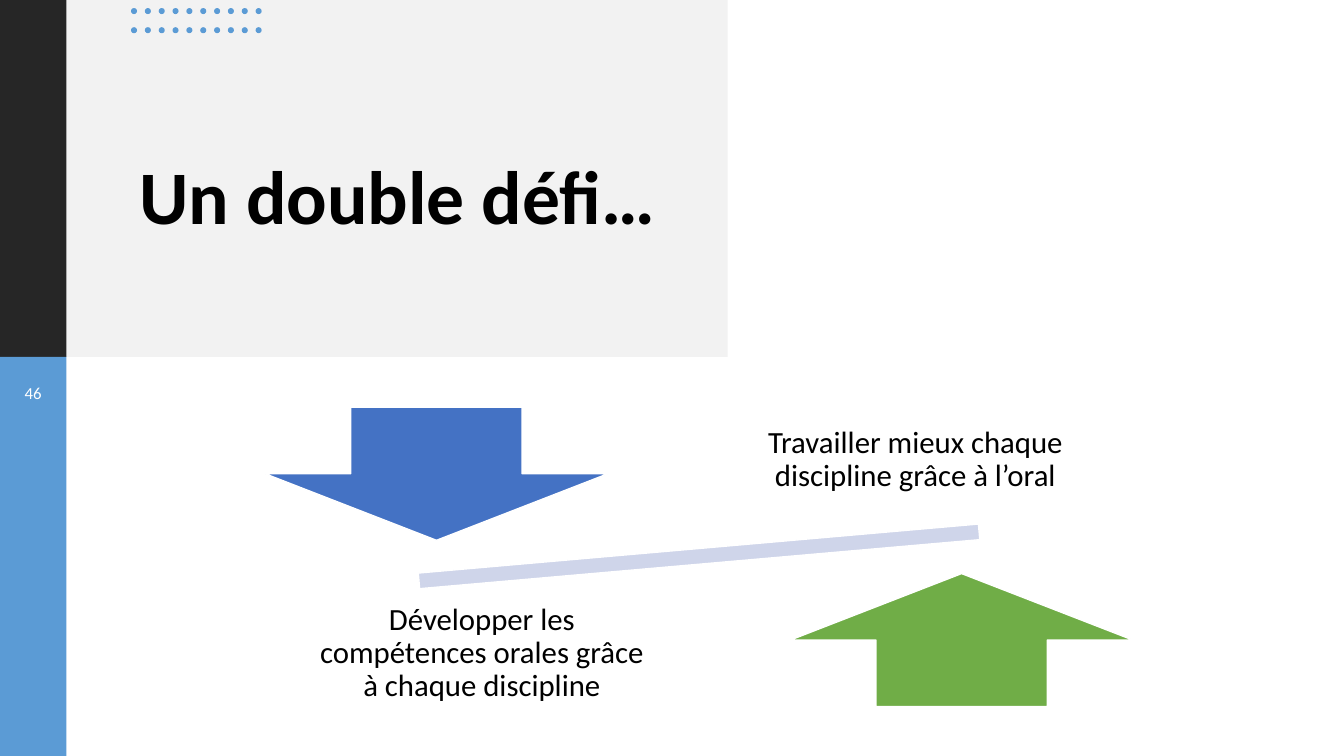
import pptx
import pptx.util
from dataclasses import dataclass
from pptx.dml.color import RGBColor
from pptx.enum.shapes import MSO_SHAPE
from pptx.enum.text import MSO_ANCHOR, MSO_AUTO_SIZE, PP_ALIGN


@dataclass(frozen=True)
class Theme:
    font: str = "Calibri"
    black: str = "000000"
    white: str = "FFFFFF"
    panel: str = "F2F2F2"
    strip: str = "262626"
    accent: str = "5B9BD5"
    beam: str = "CFD5EA"
    blue_arrow: str = "4472C4"
    green_arrow: str = "70AD47"
    title_size: int = 54
    label_size: int = 22
    number_size: int = 12


theme = Theme()
presentation = pptx.Presentation()
presentation.slide_width = pptx.util.Inches(13.33)
presentation.slide_height = pptx.util.Inches(7.5)
column = presentation.slide_width / 100
row = presentation.slide_height / 100
slide = presentation.slides.add_slide(presentation.slide_layouts[5])


def add_block(kind, left, top, width, height, fill, outline=None):
    """Add a flat preset shape, placed in hundredths of the slide's size."""
    shape = slide.shapes.add_shape(
        kind, int(left * column), int(top * row), int(width * column), int(height * row))
    shape.shadow.inherit = False
    shape.fill.solid()
    shape.fill.fore_color.rgb = RGBColor.from_string(fill)
    if outline:
        shape.line.color.rgb = RGBColor.from_string(outline)
        shape.line.width = pptx.util.Pt(1)
    else:
        shape.line.fill.background()
    return shape


def write_text(text, left, top, width, height, size, color=theme.black, bold=False,
               align=PP_ALIGN.CENTER, line_spacing=1.0, space_after=0, inset=None, shape=None):
    """Write one paragraph in a new text box, or in the shape given."""
    shape = shape or slide.shapes.add_textbox(0, 0, 0, 0)
    shape.left, shape.top = int(left * column), int(top * row)
    shape.width, shape.height = int(width * column), int(height * row)
    frame = shape.text_frame
    frame.text = text
    frame.word_wrap = True
    frame.auto_size = MSO_AUTO_SIZE.NONE
    frame.vertical_anchor = MSO_ANCHOR.MIDDLE
    if inset is not None:
        frame.margin_left = frame.margin_right = pptx.util.Inches(inset)
        frame.margin_top = frame.margin_bottom = pptx.util.Inches(inset)
    paragraph = frame.paragraphs[0]
    paragraph.alignment = align
    paragraph.line_spacing = line_spacing
    paragraph.space_after = pptx.util.Pt(space_after)
    font = paragraph.runs[0].font
    font.name = theme.font
    font.size = pptx.util.Pt(size)
    font.bold = bold
    font.color.rgb = RGBColor.from_string(color)


# Title panel and side strip
strip_width, panel_height = 4.95, 47.2
add_block(MSO_SHAPE.RECTANGLE, 0, 0, 54.15, panel_height, theme.panel)
title = slide.shapes.title
title.element.getparent().append(title.element)
write_text("Un double défi…", 9.6, 9.87, 41.55, 33.07, theme.title_size, bold=True,
           align=PP_ALIGN.LEFT, line_spacing=0.9, shape=title)
add_block(MSO_SHAPE.RECTANGLE, 0, 0, strip_width, panel_height, theme.strip)

for dot_row in range(2):
    for dot_column in range(10):
        add_block(MSO_SHAPE.OVAL, 9.75 + 1.03 * dot_column, 1.07 + 2.53 * dot_row,
                  0.45, 0.8, theme.accent)

add_block(MSO_SHAPE.RECTANGLE, 0, panel_height, strip_width, 100 - panel_height, theme.accent)
write_text("46", 0.6, 49.33, 3.75, 5.33, theme.number_size, color=theme.white, space_after=6)

# Balance beam with one arrow and one label on each side
beam = add_block(MSO_SHAPE.MATH_MINUS, 23.55, 69.2, 56.93, 8.8, theme.beam, theme.white)
beam.rotation = 355

challenges = [
    (MSO_SHAPE.DOWN_ARROW, 19.73, 53.87, theme.blue_arrow,
     "Travailler mieux chaque discipline grâce à l’oral", 54.53, 51.6),
    (MSO_SHAPE.UP_ARROW, 58.8, 75.87, theme.green_arrow,
     "Développer les compétences orales grâce à chaque discipline", 22.28, 77.2),
]
for arrow, arrow_left, arrow_top, color, label, label_left, label_top in challenges:
    add_block(arrow, arrow_left, arrow_top, 25.5, 17.6, color, theme.white)
    write_text(label, label_left, label_top, 27.15, 18.53, theme.label_size,
               line_spacing=0.9, space_after=7.7, inset=0.17)

presentation.save("out.pptx")
